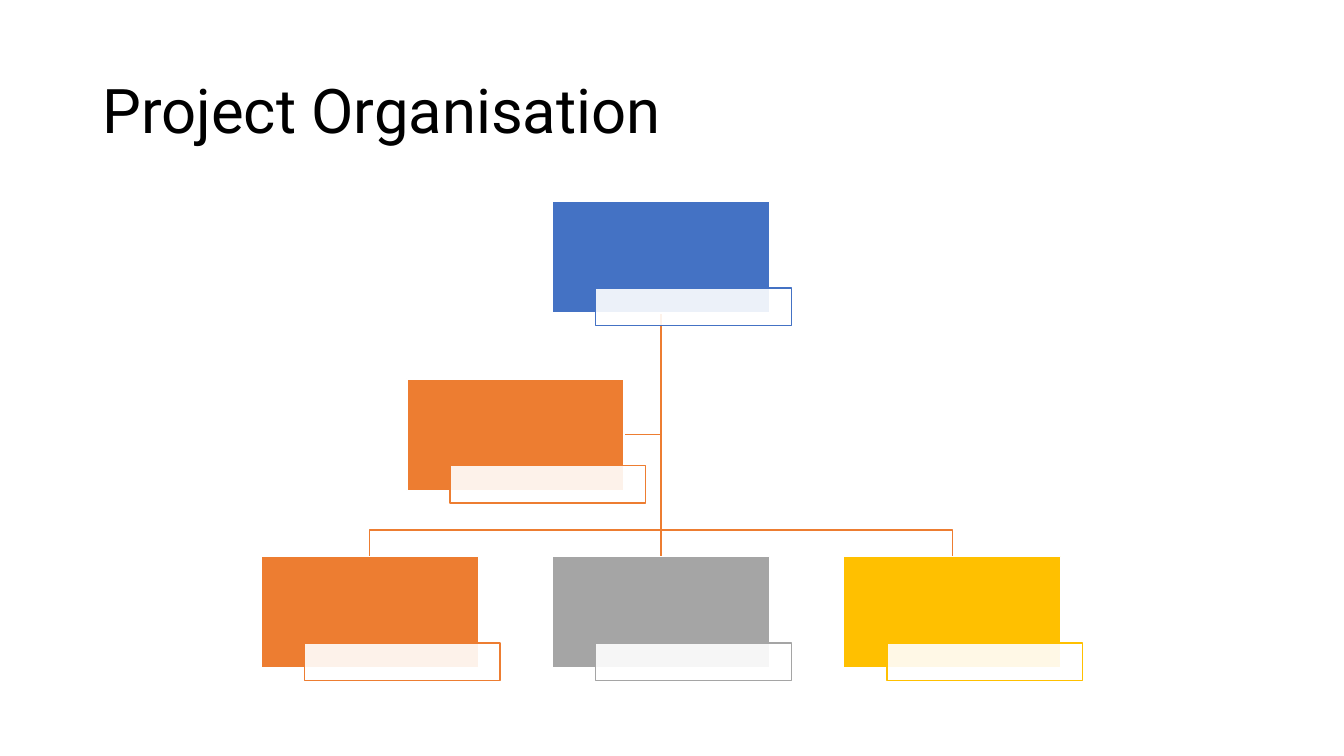
from lxml.etree import SubElement
from pptx import Presentation
from pptx.dml.color import RGBColor
from pptx.enum.shapes import MSO_CONNECTOR, MSO_SHAPE
from pptx.enum.text import MSO_ANCHOR
from pptx.oxml.ns import qn
from pptx.util import Cm, Pt

TITLE = "Project Organisation"
TITLE_FRAME = (2.33, 1.02, 29.21, 3.68)
TITLE_FONT = {"name": "Roboto", "size": Pt(44)}

# Lengths in centimetres; columns count from the centre line, rows from the top.
CENTRE, TOP = 16.66, 5.08
COLUMN_STEP, ROW_STEP = 7.34, 4.47
BOX_WIDTH, BOX_HEIGHT = 5.47, 2.81
LABEL_LEFT, LABEL_TOP, LABEL_WIDTH, LABEL_HEIGHT = 1.09, 2.18, 4.93, 0.95
BEND_ABOVE_BOX = 0.66

ORANGE = "ED7D31"
WHITE = "FFFFFF"
LEADER = (0, 0, "4472C4")
TEAM = [(-1, 2, ORANGE), (0, 2, "A5A5A5"), (1, 2, "FFC000")]
ASSISTANT = (-0.5, 1, ORANGE)


def color(hex_string):
    return RGBColor.from_string(hex_string)


def set_line(shape, hex_string):
    shape.line.color.rgb = color(hex_string)
    shape.line.width = Pt(1)


def add_box(slide, frame, fill, line, opacity=100):
    shape = slide.shapes.add_shape(MSO_SHAPE.RECTANGLE, *map(Cm, frame))
    shape.shadow.inherit = False
    shape.fill.solid()
    shape.fill.fore_color.rgb = color(fill)
    if opacity < 100:
        fill_color = shape.fill._xPr.find(qn("a:solidFill"))[0]
        SubElement(fill_color, qn("a:alpha"), val=str(opacity * 1000))
    set_line(shape, line)


def add_position(slide, column, row, hex_string):
    """Add a person's box with the label that overlaps its lower right corner."""
    left = CENTRE + column * COLUMN_STEP - BOX_WIDTH / 2
    top = TOP + row * ROW_STEP
    add_box(slide, (left, top, BOX_WIDTH, BOX_HEIGHT), hex_string, WHITE)
    label = (left + LABEL_LEFT, top + LABEL_TOP, LABEL_WIDTH, LABEL_HEIGHT)
    add_box(slide, label, WHITE, hex_string, opacity=90)


def add_bent_line(slide, points):
    corners = [(Cm(x), Cm(y)) for x, y in points]
    builder = slide.shapes.build_freeform(*corners[0])
    builder.add_line_segments(corners[1:], close=False)
    shape = builder.convert_to_shape()
    shape.shadow.inherit = False
    shape.fill.background()
    set_line(shape, ORANGE)


def add_straight_line(slide, start, end):
    line = slide.shapes.add_connector(MSO_CONNECTOR.STRAIGHT, *map(Cm, start + end))
    set_line(line, ORANGE)
    SubElement(line._element.spPr, qn("a:effectLst"))


def add_links(slide):
    start = (CENTRE, TOP + BOX_HEIGHT)
    column, row, _ = ASSISTANT
    middle = TOP + row * ROW_STEP + BOX_HEIGHT / 2
    side = CENTRE + column * COLUMN_STEP + BOX_WIDTH / 2
    add_bent_line(slide, [start, (CENTRE, middle), (side, middle)])
    for column, row, _ in TEAM:
        end = (CENTRE + column * COLUMN_STEP, TOP + row * ROW_STEP)
        if column == 0:
            add_straight_line(slide, start, end)
        else:
            bend = end[1] - BEND_ABOVE_BOX
            add_bent_line(slide, [start, (CENTRE, bend), (end[0], bend), end])


def add_title(slide):
    frame = slide.shapes.add_textbox(*map(Cm, TITLE_FRAME)).text_frame
    frame.word_wrap = True
    frame.vertical_anchor = MSO_ANCHOR.MIDDLE
    paragraph = frame.paragraphs[0]
    paragraph.text = TITLE
    paragraph.line_spacing = 0.9
    for name, value in TITLE_FONT.items():
        setattr(paragraph.font, name, value)
    paragraph.font.color.rgb = color("000000")


def main():
    presentation = Presentation()
    presentation.slide_width, presentation.slide_height = Cm(33.87), Cm(19.05)
    slide = presentation.slides.add_slide(presentation.slide_layouts[6])
    add_title(slide)
    add_links(slide)
    for position in [LEADER, *TEAM, ASSISTANT]:
        add_position(slide, *position)
    presentation.save("out.pptx")


if __name__ == "__main__":
    main()
